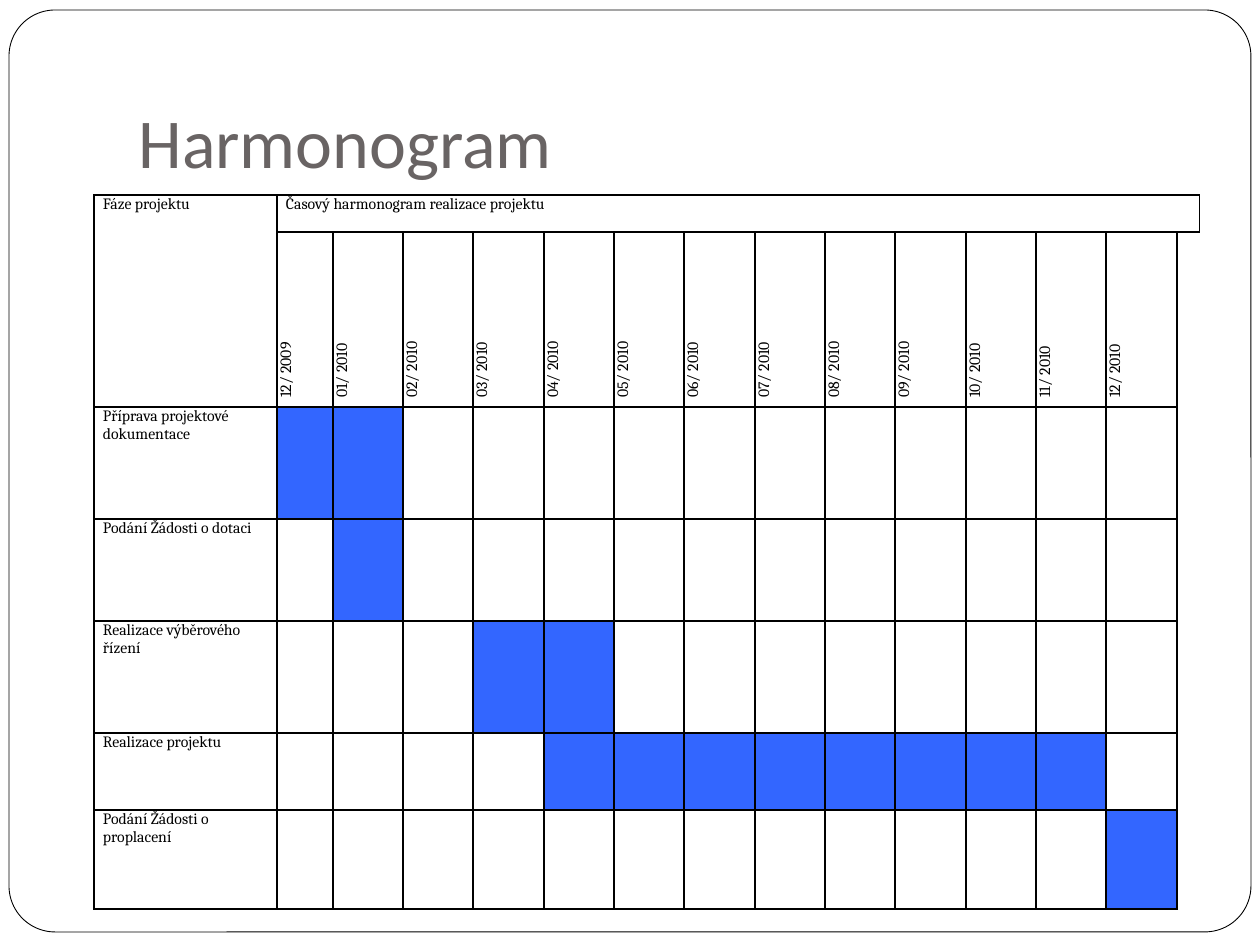
"""Build a project schedule slide with a Gantt-style table."""
from lxml import etree
from pptx import Presentation
from pptx.dml.color import RGBColor
from pptx.enum.shapes import MSO_SHAPE
from pptx.enum.text import MSO_ANCHOR, PP_ALIGN
from pptx.oxml.ns import qn
from pptx.util import Pt

ROUND = MSO_SHAPE.ROUNDED_RECTANGLE
BOTTOM = MSO_ANCHOR.BOTTOM
LEFT = PP_ALIGN.LEFT
PX = 914400 // 126

TITLE = "Harmonogram"
HEADS = ("Fáze projektu", "Časový harmonogram realizace projektu")
MONTHS = ["12/ 2009"] + [f"{m:02}/ 2010" for m in range(1, 13)]
PHASES = [
    ("Příprava projektové dokumentace", "12/ 2009", "01/ 2010"),
    ("Podání Žádosti o dotaci", "01/ 2010", "01/ 2010"),
    ("Realizace výběrového řízení", "03/ 2010", "04/ 2010"),
    ("Realizace projektu", "04/ 2010", "11/ 2010"),
    ("Podání Žádosti o proplacení", "12/ 2010", "12/ 2010"),
]
HEIGHTS = [37, 175, 112, 102, 112, 77, 99]
SPAN = 844
STEPS = [SPAN * i // 12 for i in range(13)]
WIDTHS = [183, 56] + [b - a for a, b in zip(STEPS, STEPS[1:])] + [18]
BLACK, WHITE, BLUE, GRAY = "000000", "FFFFFF", "3366FF", "696464"


def rgb(code):
    return RGBColor.from_string(code)


def px(*sizes):
    return [size * PX for size in sizes]


def border(cell, sides):
    props = cell._tc.get_or_add_tcPr()
    for spot, side in enumerate("LRTB"):
        line = etree.Element(qn(f"a:ln{side}"), w=str(Pt(1)))
        if side in sides:
            fill = etree.SubElement(line, qn("a:solidFill"))
            etree.SubElement(fill, qn("a:srgbClr"), val=BLACK)
        else:
            etree.SubElement(line, qn("a:noFill"))
        props.insert(spot, line)


def style(cell, text="", fill=WHITE, sides="LRTB"):
    cell.margin_left = cell.margin_right = 9 * PX
    cell.margin_top = cell.margin_bottom = 0
    cell.text = text
    font = cell.text_frame.paragraphs[0].font
    font.name, font.size = "Cambria", Pt(9)
    font.color.rgb = rgb(BLACK)
    if fill:
        cell.fill.solid()
        cell.fill.fore_color.rgb = rgb(fill)
    else:
        cell.fill.background()
    border(cell, sides)


def add_frame(slide):
    frame = slide.shapes.add_shape(ROUND, *px(9, 10, 1242, 922))
    frame.adjustments[0] = 0.05
    frame.shadow.inherit = False
    frame.fill.solid()
    frame.fill.fore_color.rgb = rgb(WHITE)
    frame.line.color.rgb = rgb(BLACK)
    frame.line.width = Pt(0.5)
    slide.shapes._spTree.insert(2, frame._element)


def add_title(slide):
    title = slide.shapes.title
    title.left, title.top, title.width, title.height = px(126, 38, 1071, 157)
    frame = title.text_frame
    frame.text = TITLE
    frame.vertical_anchor = BOTTOM
    frame.margin_bottom = 12 * PX
    para = frame.paragraphs[0]
    para.alignment = LEFT
    para.font.name, para.font.size = "Calibri", Pt(40)
    para.font.color.rgb = rgb(GRAY)


def add_plan(slide):
    box = px(94, 195, sum(WIDTHS), sum(HEIGHTS))
    table = slide.shapes.add_table(len(HEIGHTS), len(WIDTHS), *box).table
    table.first_row = table.horz_banding = False
    for col, width in zip(table.columns, WIDTHS):
        col.width = width * PX
    for row, height in zip(table.rows, HEIGHTS):
        row.height = height * PX
    last = len(WIDTHS) - 1
    table.cell(0, 0).merge(table.cell(1, 0))
    table.cell(0, 1).merge(table.cell(0, last))
    for col in range(last + 1):
        style(table.cell(0, col), HEADS[col] if col < 2 else "")
    style(table.cell(1, 0))
    style(table.cell(1, last), fill=None, sides="LT")
    for col, month in enumerate(MONTHS, 1):
        cell = table.cell(1, col)
        style(cell, month)
        cell._tc.get_or_add_tcPr().set("vert", "vert270")
    for row, (name, start, end) in enumerate(PHASES, 2):
        style(table.cell(row, 0), name)
        style(table.cell(row, last), fill=None, sides="L")
        first, final = MONTHS.index(start), MONTHS.index(end)
        for pos in range(len(MONTHS)):
            busy = first <= pos <= final
            style(table.cell(row, pos + 1), fill=BLUE if busy else WHITE)


def main():
    deck = Presentation()
    deck.slide_width, deck.slide_height = px(1260, 945)
    slide = deck.slides.add_slide(deck.slide_layouts[5])
    add_frame(slide)
    add_title(slide)
    add_plan(slide)
    deck.save("out.pptx")


if __name__ == "__main__":
    main()
